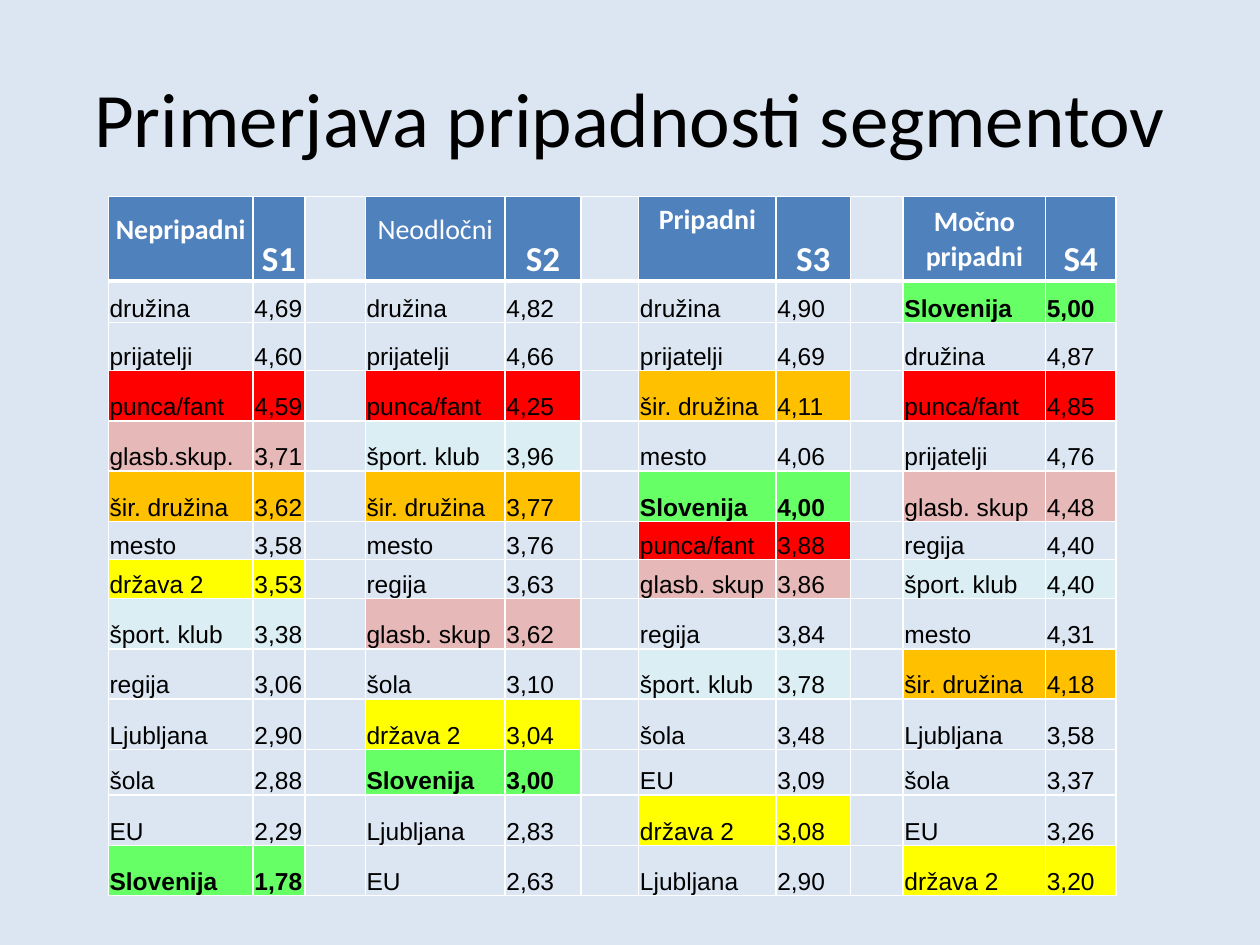
"""Build a slide comparing how attached four segments feel to various groups."""
from dataclasses import dataclass
from typing import Any, Optional

from lxml import etree
from pptx import Presentation, util as u
from pptx.dml import color
from pptx.enum import text
from pptx.oxml import ns

BACKGROUND = "DCE6F2"
HEADER_FILL = "4F81BD"
WHITE = "FFFFFF"
BLACK = "000000"
GROUP_FILLS = {
    "Slovenija": "66FF66",
    "punca/fant": "FF0000",
    "šir. družina": "FFC000",
    "država 2": "FFFF00",
    "glasb.skup.": "E6B9B8",
    "glasb. skup": "E6B9B8",
    "šport. klub": "DBEEF4",
}
COLUMN_WIDTHS = [1.15, 0.41, 0.48, 1.11, 0.6, 0.46, 1.09, 0.59, 0.42, 1.13, 0.56]
ROW_HEIGHTS = [0.67, 0.33, 0.38, 0.4, 0.4, 0.4, 0.3, 0.31, 0.4, 0.4, 0.4, 0.36, 0.4, 0.4]
COLUMNS_PER_SEGMENT = 3


@dataclass
class Segment:
    """A named segment with its ranked groups and scores."""
    name: str
    code: str
    ranking: list[tuple[str, str]]
    bold: bool = True
    anchor: Any = text.MSO_ANCHOR.BOTTOM
    bottom: float = 0


@dataclass
class CellStyle:
    """The look of one table cell."""
    fill: Optional[str] = None
    size: int = 14
    name: str = "Arial"
    color: str = BLACK
    bold: bool = False
    align: Any = text.PP_ALIGN.LEFT
    anchor: Any = text.MSO_ANCHOR.BOTTOM
    bottom: float = 0
    line_below: int = 1


SEGMENTS = [
    Segment("Nepripadni", "S1", [
        ("družina", "4,69"), ("prijatelji", "4,60"), ("punca/fant", "4,59"),
        ("glasb.skup.", "3,71"), ("šir. družina", "3,62"), ("mesto", "3,58"),
        ("država 2", "3,53"), ("šport. klub", "3,38"), ("regija", "3,06"),
        ("Ljubljana", "2,90"), ("šola", "2,88"), ("EU", "2,29"), ("Slovenija", "1,78"),
    ], bottom=0.27),
    Segment("Neodločni", "S2", [
        ("družina", "4,82"), ("prijatelji", "4,66"), ("punca/fant", "4,25"),
        ("šport. klub", "3,96"), ("šir. družina", "3,77"), ("mesto", "3,76"),
        ("regija", "3,63"), ("glasb. skup", "3,62"), ("šola", "3,10"),
        ("država 2", "3,04"), ("Slovenija", "3,00"), ("Ljubljana", "2,83"), ("EU", "2,63"),
    ], bold=False, bottom=0.27),
    Segment("Pripadni", "S3", [
        ("družina", "4,90"), ("prijatelji", "4,69"), ("šir. družina", "4,11"),
        ("mesto", "4,06"), ("Slovenija", "4,00"), ("punca/fant", "3,88"),
        ("glasb. skup", "3,86"), ("regija", "3,84"), ("šport. klub", "3,78"),
        ("šola", "3,48"), ("EU", "3,09"), ("država 2", "3,08"), ("Ljubljana", "2,90"),
    ], bottom=0.35),
    Segment("Močno pripadni", "S4", [
        ("Slovenija", "5,00"), ("družina", "4,87"), ("punca/fant", "4,85"),
        ("prijatelji", "4,76"), ("glasb. skup", "4,48"), ("regija", "4,40"),
        ("šport. klub", "4,40"), ("mesto", "4,31"), ("šir. družina", "4,18"),
        ("Ljubljana", "3,58"), ("šola", "3,37"), ("EU", "3,26"), ("država 2", "3,20"),
    ], anchor=text.MSO_ANCHOR.MIDDLE),
]


def set_attributes(target: Any, values: dict[str, Any]) -> None:
    """Set every named attribute on the target."""
    for name, value in values.items():
        setattr(target, name, value)


def paint(fill: Any, hex_color: Optional[str]) -> None:
    """Give a solid fill, or none when there is no colour."""
    if hex_color is None:
        fill.background()
    else:
        fill.solid()
        fill.fore_color.rgb = color.RGBColor.from_string(hex_color)


def add_borders(cell: Any, line_below: int) -> None:
    """Draw white lines around a cell."""
    properties = cell._tc.get_or_add_tcPr()
    for side, points in {"lnL": 1, "lnR": 1, "lnT": 1, "lnB": line_below}.items():
        line = etree.SubElement(properties, ns.qn(f"a:{side}"), w=str(u.Pt(points)))
        solid = etree.SubElement(line, ns.qn("a:solidFill"))
        etree.SubElement(solid, ns.qn("a:srgbClr"), val=WHITE)


def write_cell(cell: Any, content: str, style: CellStyle) -> None:
    """Fill a cell with styled text."""
    set_attributes(cell, {
        "margin_left": u.Inches(0.01), "margin_right": u.Inches(0.01),
        "margin_top": u.Inches(0.01), "margin_bottom": u.Inches(style.bottom),
        "vertical_anchor": style.anchor,
    })
    add_borders(cell, style.line_below)
    paint(cell.fill, style.fill)
    paragraph = cell.text_frame.paragraphs[0]
    paragraph.alignment = style.align
    if not content:
        etree.SubElement(paragraph._p, ns.qn("a:endParaRPr"), sz=str(style.size * 100))
        return
    run = paragraph.add_run()
    run.text = content
    set_attributes(run.font, {"size": u.Pt(style.size), "name": style.name, "bold": style.bold})
    paint(run.font.fill, style.color)


def write_segment(table: Any, segment: Segment, column: int) -> None:
    """Write a segment's header and ranking into two columns."""
    header = {"fill": HEADER_FILL, "name": "Calibri", "color": WHITE,
              "align": text.PP_ALIGN.CENTER, "line_below": 3}
    write_cell(table.cell(0, column), segment.name, CellStyle(
        size=16, bold=segment.bold, anchor=segment.anchor, bottom=segment.bottom, **header))
    write_cell(table.cell(0, column + 1), segment.code, CellStyle(size=20, bold=True, **header))
    for row, entry in enumerate(segment.ranking, start=1):
        group = entry[0]
        style = CellStyle(fill=GROUP_FILLS.get(group), bold=group == "Slovenija",
                          line_below=3 if row == 0 else 1)
        for offset, content in enumerate(entry):
            write_cell(table.cell(row, column + offset), content, style)


def write_gap(table: Any, column: int, fill: Optional[str]) -> None:
    """Style the empty column between two segments."""
    for row in range(len(ROW_HEIGHTS)):
        write_cell(table.cell(row, column), "", CellStyle(fill=fill, line_below=1 if row else 3))


def add_title(slide: Any, content: str) -> None:
    """Place and format the title."""
    title = slide.shapes.title
    set_attributes(title, {"left": u.Inches(0.5), "top": u.Inches(0.3),
                           "width": u.Inches(9), "height": u.Inches(1.25)})
    title.text_frame.text = content
    title.text_frame.vertical_anchor = text.MSO_ANCHOR.MIDDLE
    paragraph = title.text_frame.paragraphs[0]
    paragraph.alignment = text.PP_ALIGN.CENTER
    font = paragraph.runs[0].font
    set_attributes(font, {"size": u.Pt(44), "name": "Calibri"})
    paint(font.fill, BLACK)


def add_comparison(slide: Any) -> None:
    """Add the table of all segments."""
    table = slide.shapes.add_table(
        len(ROW_HEIGHTS), len(COLUMN_WIDTHS), u.Inches(0.86), u.Inches(1.56),
        u.Inches(sum(COLUMN_WIDTHS)), u.Inches(sum(ROW_HEIGHTS))).table
    set_attributes(table, {"first_row": False, "horz_banding": False})
    for column, width in zip(table.columns, COLUMN_WIDTHS):
        column.width = u.Inches(width)
    for row, height in zip(table.rows, ROW_HEIGHTS):
        row.height = u.Inches(height)
    for index, segment in enumerate(SEGMENTS):
        column = index * COLUMNS_PER_SEGMENT
        write_segment(table, segment, column)
        if index:
            write_gap(table, column - 1, BACKGROUND if index == 1 else None)


def main() -> None:
    """Build and save the presentation."""
    presentation = Presentation()
    set_attributes(presentation, {"slide_width": u.Inches(10), "slide_height": u.Inches(7.5)})
    slide = presentation.slides.add_slide(presentation.slide_layouts[5])
    paint(slide.background.fill, BACKGROUND)
    add_title(slide, "Primerjava pripadnosti segmentov")
    add_comparison(slide)
    presentation.save("out.pptx")


if __name__ == "__main__":
    main()
